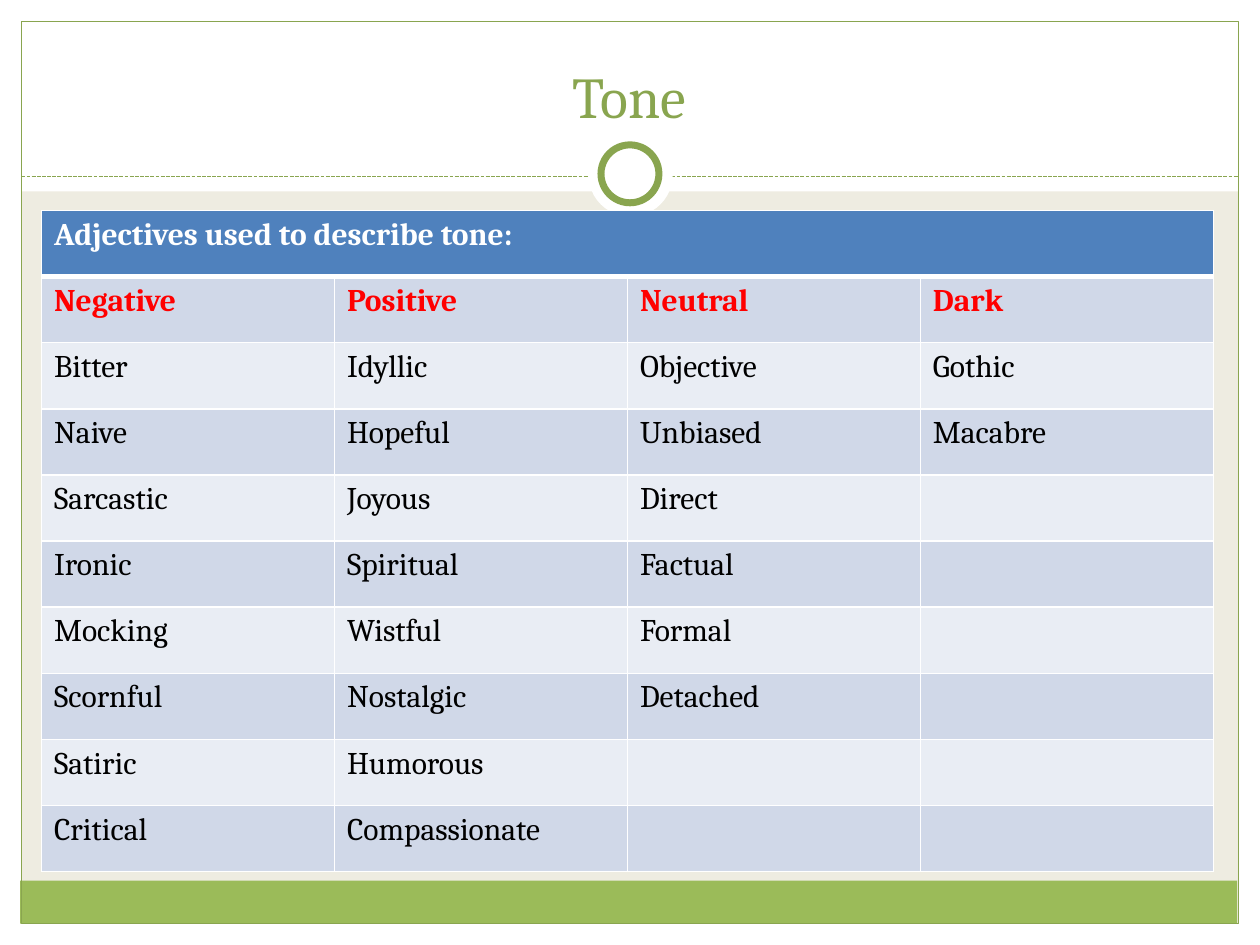
from dataclasses import dataclass
from typing import Any

import pptx
import pptx.chart.data
import pptx.dml.color
import pptx.enum.dml
import pptx.enum.shapes
import pptx.enum.text
import pptx.oxml
import pptx.oxml.ns
import pptx.util
from pptx.util import Inches

FONT = "Cambria"
HUES = {
    "back": "EEECE1", "white": "FFFFFF", "green": "9BBB59", "edge": "89A54F",
    "head": "4F81BD", "dark": "D0D8E8", "light": "E9EDF4",
    "red": "FF0000", "black": "000000",
}
KINDS = pptx.enum.shapes.MSO_SHAPE


@dataclass
class Part:
    left: float
    top: float
    width: float
    height: float
    fill: str | None = "white"
    line: str | None = None
    weight: float = 0.75
    kind: Any = KINDS.RECTANGLE


BANDS = [
    Part(0, 7.33, 10, 0.17),
    Part(0, 0, 10, 1.52),
    Part(0, 0, 0.17, 7.5),
    Part(9.83, 0, 0.17, 7.5),
    Part(0.16, 6.99, 9.66, 0.34, "green"),
    Part(0.17, 0.17, 9.66, 7.16, None, "edge"),
]
RINGS = [
    Part(4.67, 1.05, 0.67, 0.67, kind=KINDS.OVAL),
    Part(4.77, 1.15, 0.46, 0.46, line="edge", weight=4, kind=KINDS.OVAL),
]
HEAD = "Adjectives used to describe tone:"
TONES = {
    "Negative": ["Bitter", "Naive", "Sarcastic", "Ironic", "Mocking",
                 "Scornful", "Satiric", "Critical"],
    "Positive": ["Idyllic", "Hopeful", "Joyous", "Spiritual", "Wistful",
                 "Nostalgic", "Humorous", "Compassionate"],
    "Neutral": ["Objective", "Unbiased", "Direct", "Factual", "Formal",
                "Detached"],
    "Dark": ["Gothic", "Macabre"],
}


def color(name: str) -> pptx.dml.color.RGBColor:
    return pptx.dml.color.RGBColor.from_string(HUES[name])


def paint(fill: Any, name: str | None) -> None:
    if name is None:
        fill.background()
    else:
        fill.solid()
        fill.fore_color.rgb = color(name)


def style(font: Any, hue: str, **form: Any) -> None:
    for key, value in {"name": FONT, **form}.items():
        setattr(font, key, value)
    font.color.rgb = color(hue)


def draw(slide: Any, part: Part) -> None:
    box = [Inches(n) for n in (part.left, part.top, part.width, part.height)]
    shape = slide.shapes.add_shape(part.kind, *box)
    shape.shadow.inherit = False
    paint(shape.fill, part.fill)
    paint(shape.line.fill, part.line)
    if part.line:
        shape.line.width = pptx.util.Pt(part.weight)


def rule(slide: Any) -> None:
    """Draw the dashed line under the title."""
    line = slide.shapes.add_connector(
        pptx.enum.shapes.MSO_CONNECTOR.STRAIGHT,
        Inches(0.17), Inches(1.4), Inches(9.83), Inches(1.4))
    line.line.color.rgb = color("edge")
    line.line.width = pptx.util.Pt(0.75)
    line.line.dash_style = pptx.enum.dml.MSO_LINE.SQUARE_DOT
    props = line._element.spPr
    props.append(props.makeelement(pptx.oxml.ns.qn("a:effectLst"), {}))


def border(cell: Any, row: int) -> None:
    """Give a cell white edges, thick between the head and the body."""
    props = cell._tc.get_or_add_tcPr()
    thick = {(0, "B"), (1, "T")}
    for spot, side in enumerate("LRTB"):
        width = pptx.util.Pt(3 if (row, side) in thick else 1)
        props.insert(spot, pptx.oxml.parse_xml(
            f'<a:ln{side} {pptx.oxml.ns.nsdecls("a")} w="{width}"><a:solidFill>'
            f'<a:srgbClr val="{HUES["white"]}"/></a:solidFill></a:ln{side}>'))


def grid(slide: Any) -> None:
    count = 2 + max(len(words) for words in TONES.values())
    table = slide.shapes.add_table(
        count, len(TONES), Inches(0.33), Inches(1.67),
        Inches(9.3), Inches(5.25)).table
    table.horz_banding = False
    columns = [["", name, *words] for name, words in TONES.items()]
    columns[0][0] = HEAD
    for row in range(count):
        fill = "head" if row == 0 else "dark" if row % 2 else "light"
        hue = {0: "white", 1: "red"}.get(row, "black")
        for col, words in enumerate(columns):
            cell = table.cell(row, col)
            paint(cell.fill, fill)
            border(cell, row)
            para = cell.text_frame.paragraphs[0]
            style(para.font, hue, size=pptx.util.Pt(18), bold=row < 2)
            if row < len(words) and words[row]:
                run = para.add_run()
                run.text = words[row]
                style(run.font, hue, size=pptx.util.Pt(18), bold=row < 2)
    table.cell(0, 0).merge(table.cell(0, len(TONES) - 1))


def head(slide: Any) -> None:
    title = slide.shapes.title
    place = {"left": 0.33, "top": 0.25, "width": 9.33, "height": 0.83}
    for key, value in place.items():
        setattr(title, key, Inches(value))
    frame = title.text_frame
    frame.text = "Tone"
    frame.vertical_anchor = pptx.enum.text.MSO_ANCHOR.BOTTOM
    para = frame.paragraphs[0]
    para.alignment = pptx.enum.text.PP_ALIGN.CENTER
    style(para.runs[0].font, "edge", size=pptx.util.Pt(33))
    # Bring the title in front of the white band
    slide.shapes._spTree.append(title._element)


def main() -> None:
    deck = pptx.Presentation()
    deck.slide_width, deck.slide_height = Inches(10), Inches(7.5)
    slide = deck.slides.add_slide(deck.slide_layouts[5])
    paint(slide.background.fill, "back")
    for part in BANDS:
        draw(slide, part)
    rule(slide)
    for part in RINGS:
        draw(slide, part)
    head(slide)
    grid(slide)
    deck.save("out.pptx")


if __name__ == "__main__":
    main()
